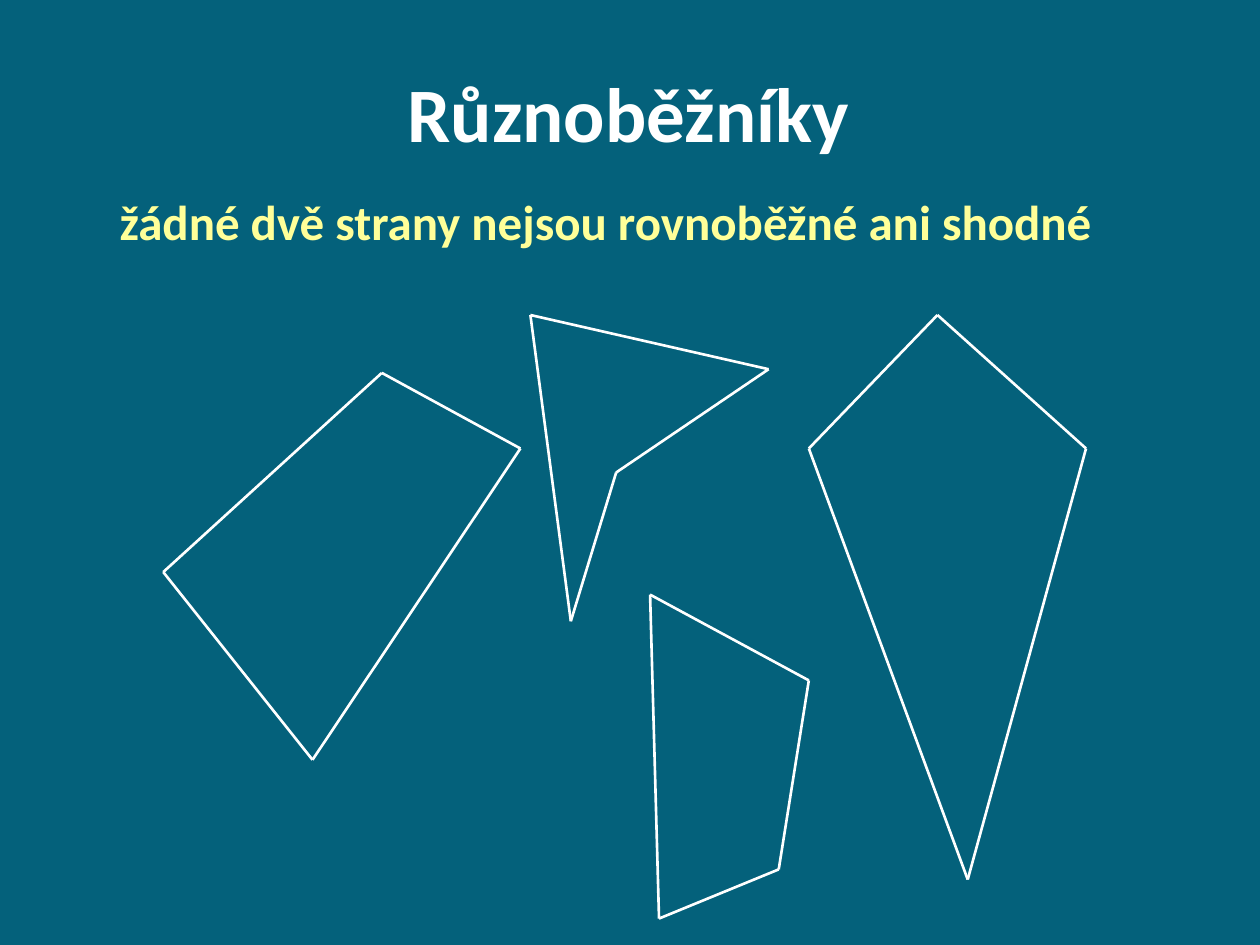
"""Build a slide showing four quadrilaterals with no parallel or equal sides."""
from lxml.etree import SubElement
from pptx import Presentation
from pptx.dml.color import RGBColor
from pptx.enum.shapes import MSO_CONNECTOR as CONN
from pptx.enum.text import MSO_ANCHOR as ANCHOR, MSO_AUTO_SIZE as FIT, PP_ALIGN as ALIGN
from pptx.oxml.ns import qn
from pptx.util import Pt

TEAL = RGBColor(0x04, 0x61, 0x7B)
WHITE = RGBColor(0xFF, 0xFF, 0xFF)
YELLOW = RGBColor(0xFF, 0xFF, 0x99)

QUADRILATERALS = [
    [(218.2, 213.1), (297.4, 256.3), (178.6, 434.2), (93.3, 326.9)],
    [(303.1, 180), (439.2, 211), (352.1, 270), (326.2, 355)],
    [(535.7, 180), (620.6, 256.3), (553, 502.6), (462.2, 256.3)],
    [(371.5, 339.8), (462.2, 388.8), (445, 496.8), (376.6, 524.9)],
]


def add_text(s, box, text, size, color, align=ALIGN.LEFT, wrap=True):
    tb = s.shapes.add_textbox(*map(Pt, box))
    tf = tb.text_frame
    tf.text = text
    tf.word_wrap = wrap
    p = tf.paragraphs[0]
    p.alignment = align
    font = p.runs[0].font
    font.name, font.size, font.bold = "Calibri", Pt(size), True
    font.color.rgb = color
    return tf


def add_side(s, start, end):
    line = s.shapes.add_connector(CONN.STRAIGHT, *map(Pt, start + end))
    line.line.color.rgb = WHITE
    line.line.width = Pt(1.5)
    SubElement(line._element.spPr, qn("a:effectLst"))


def add_quadrilateral(s, corners):
    for start, end in zip(corners, corners[1:] + corners[:1]):
        add_side(s, start, end)


def main():
    prs = Presentation()
    prs.slide_width, prs.slide_height = Pt(720), Pt(540)
    s = prs.slides.add_slide(prs.slide_layouts[6])
    s.background.fill.solid()
    s.background.fill.fore_color.rgb = TEAL

    title = add_text(s, (30.2, 32.4, 648, 62.6), " Různoběžníky", 44, WHITE, ALIGN.CENTER)
    title.vertical_anchor = ANCHOR.MIDDLE
    rule = add_text(s, (61.2, 105.8, 582.5, 41),
                    "žádné dvě strany nejsou rovnoběžné ani shodné", 28, YELLOW, wrap=False)
    rule.auto_size = FIT.SHAPE_TO_FIT_TEXT

    for corners in QUADRILATERALS:
        add_quadrilateral(s, corners)
    prs.save("out.pptx")


if __name__ == "__main__":
    main()
